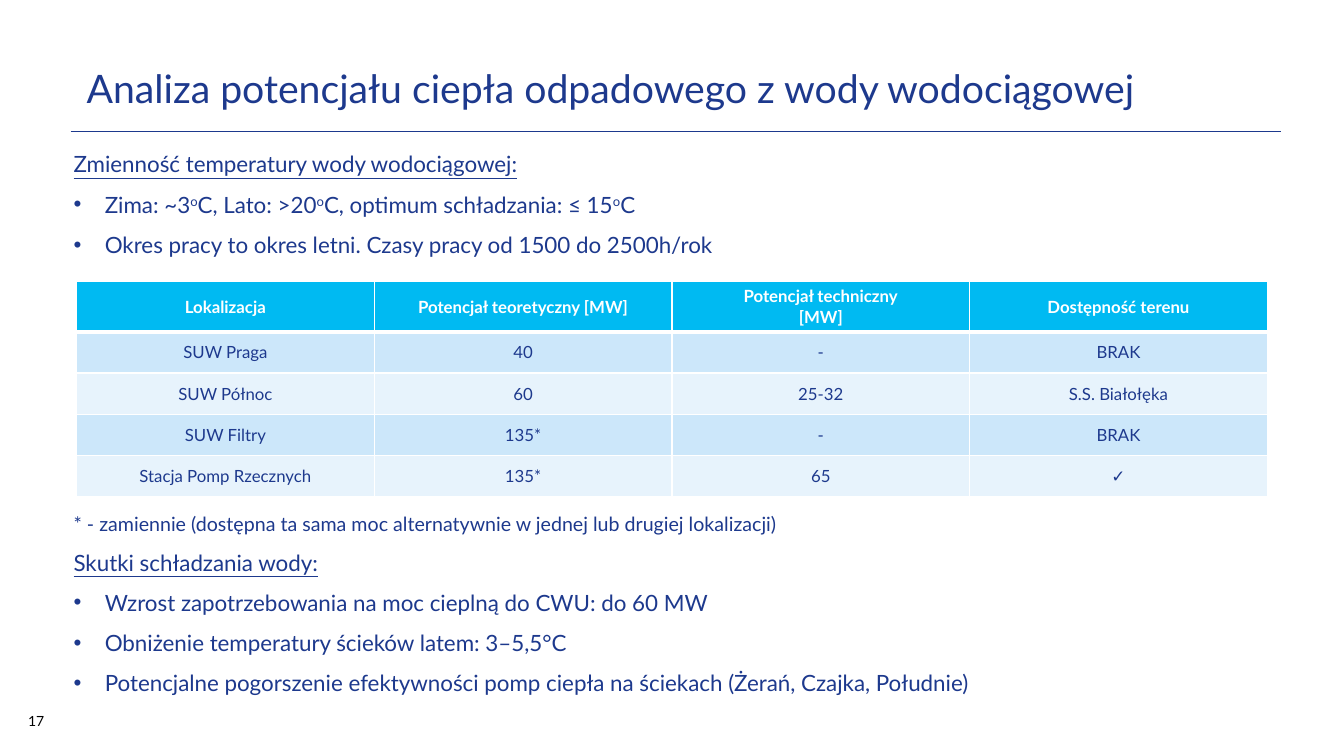
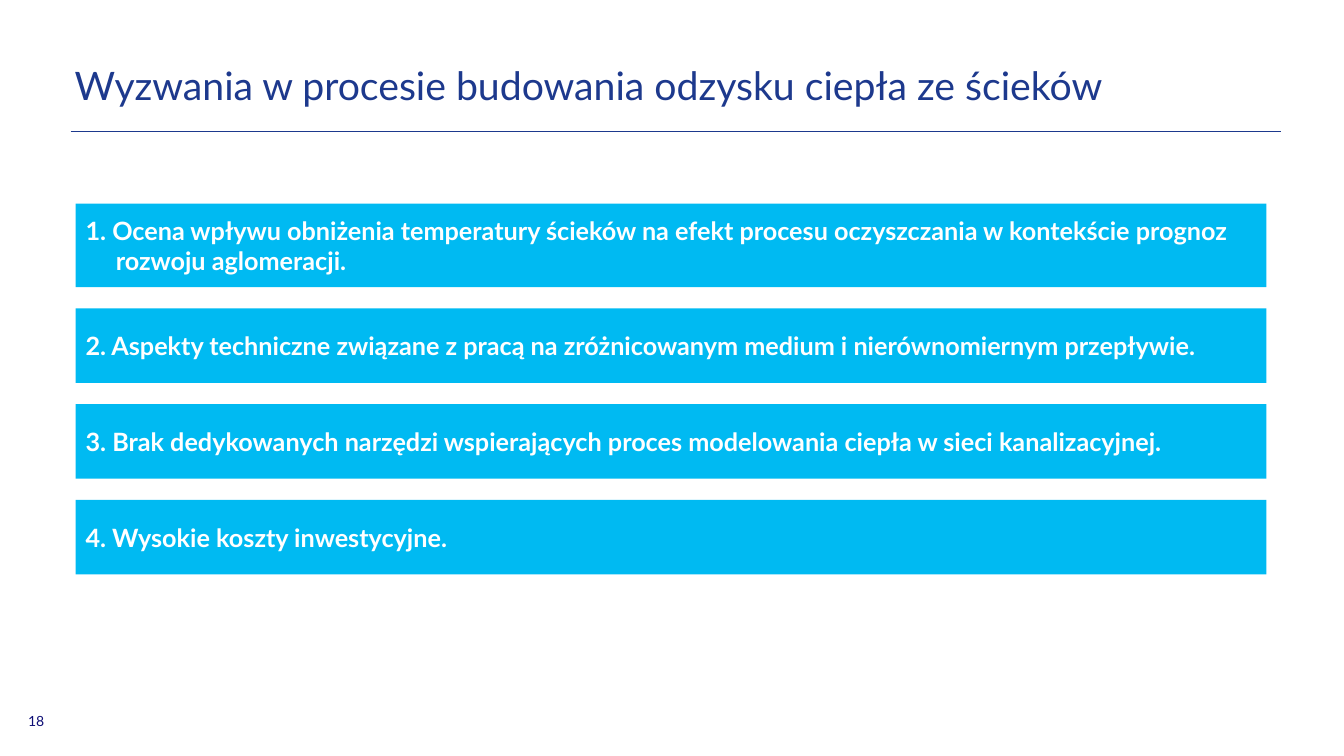
from lxml import etree
from pptx import Presentation
from pptx.dml.color import RGBColor
from pptx.enum.shapes import MSO_CONNECTOR, MSO_SHAPE
from pptx.enum.text import MSO_ANCHOR as Anchor, MSO_AUTO_SIZE as AutoSize, PP_ALIGN as Align
from pptx.oxml.ns import qn
from pptx.util import Inches, Pt

COLORS = {
    "navy": "1D398D",
    "cyan": "00BAF2",
    "row_dark": "CCE7FA",
    "row_light": "E7F3FC",
    "white": "FFFFFF",
    "black": "000000",
    "number_blue": "0F0F76",
}
FONT = "Lato"
TITLE_AND_TWO_BODIES, TITLE_ONLY = 3, 5

TOP_LIST = [
    ("heading", "Zmienność temperatury wody wodociągowej:"),
    ("bullet", "Zima: ~3^o^C, Lato: >20^o^C, optimum schładzania: ≤ 15^o^C"),
    ("bullet", "Okres pracy to okres letni. Czasy pracy od 1500 do 2500h/rok"),
]
BOTTOM_LIST = [
    ("note", "* - zamiennie (dostępna ta sama moc alternatywnie w jednej lub drugiej lokalizacji)"),
    ("heading", "Skutki schładzania wody:"),
    ("bullet", "Wzrost zapotrzebowania na moc cieplną do CWU: do 60 MW"),
    ("bullet", "Obniżenie temperatury ścieków latem: 3–5,5°C"),
    ("bullet", "Potencjalne pogorszenie efektywności pomp ciepła na ściekach (Żerań, Czajka, Południe)"),
]
POTENTIAL_ROWS = [
    ("Lokalizacja", "Potencjał teoretyczny [MW]", "Potencjał techniczny\n[MW]", "Dostępność terenu"),
    ("SUW Praga", "40", "-", "BRAK"),
    ("SUW Północ", "60", "25-32", "S.S. Białołęka"),
    ("SUW Filtry", "135*", "-", "BRAK"),
    ("Stacja Pomp Rzecznych", "135*", "65", "✓"),
]
# Text and box height
CHALLENGES = [
    ("1. Ocena wpływu obniżenia temperatury ścieków na efekt procesu oczyszczania "
     "w kontekście prognoz rozwoju aglomeracji.", 0.83),
    ("2. Aspekty techniczne związane z pracą na zróżnicowanym medium i nierównomiernym przepływie.", 0.74),
    ("3. Brak dedykowanych narzędzi wspierających proces modelowania ciepła w sieci kanalizacyjnej.", 0.74),
    ("4. Wysokie koszty inwestycyjne.", 0.74),
]


def rgb(name):
    return RGBColor.from_string(COLORS[name])


def style(para, size, color="navy", bold=False, underline=False):
    font = para.font
    font.name, font.size, font.bold, font.underline = FONT, Pt(size), bold, underline
    font.color.rgb = rgb(color)


def set_indent(para, hang):
    props = para._p.get_or_add_pPr()
    props.set("marL", str(Inches(hang)))
    props.set("indent", str(-Inches(hang)))
    return props


def place(shape, left, top, width, height):
    shape.left, shape.top = Inches(left), Inches(top)
    shape.width, shape.height = Inches(width), Inches(height)


# Shared frame: title, rule and page number
def add_page(deck, layout, title, title_at, anchor, number, number_color, left_inset=0.1):
    page = deck.slides.add_slide(deck.slide_layouts[layout])
    place(page.shapes.title, *title_at)
    frame = page.shapes.title.text_frame
    frame.text, frame.vertical_anchor = title, anchor
    frame.auto_size, frame.margin_left = AutoSize.NONE, Inches(left_inset)
    para = frame.paragraphs[0]
    para.alignment, para.line_spacing = Align.LEFT, 0.9
    style(para, 28)

    rule = page.shapes.add_connector(
        MSO_CONNECTOR.STRAIGHT, Inches(0.7), Inches(1.3), Inches(12.71), Inches(1.3))
    rule.line.color.rgb, rule.line.width = rgb("navy"), Pt(0.5)
    etree.SubElement(rule._element.spPr, qn("a:effectLst"))

    box = page.shapes.add_textbox(Inches(0.18), Inches(7.02), Inches(0.46), Inches(0.32))
    box.text_frame.word_wrap = True
    box.text_frame.text = number
    style(box.text_frame.paragraphs[0], 10, number_color)
    return page


def add_marked_text(para, text):
    """Text between carets is raised."""
    for index, part in enumerate(text.split("^")):
        span = para.add_run()
        span.text = part
        if index % 2:
            span._r.get_or_add_rPr().set("baseline", "30000")


def fill_body(body, top, height, items):
    place(body, 0.63, top, 11.81, height)
    frame = body.text_frame
    frame.auto_size = AutoSize.NONE
    for index, (kind, text) in enumerate(items):
        para = frame.add_paragraph() if index else frame.paragraphs[0]
        add_marked_text(para, text)
        para.alignment, para.line_spacing = Align.JUSTIFY, 1.5
        para.space_before = Pt(0)
        if kind == "bullet":
            props = set_indent(para, 0.31)
            etree.SubElement(props, qn("a:buFont")).set("typeface", "Arial")
            etree.SubElement(props, qn("a:buChar")).set("char", "•")
        else:
            etree.SubElement(set_indent(para, 0), qn("a:buNone"))
        style(para, 14 if kind == "note" else 16, underline=kind == "heading")


def set_borders(cell, is_header):
    props = cell._tc.get_or_add_tcPr()
    for side in "LRTB":
        width = 3 if is_header and side == "B" else 1
        line = etree.SubElement(props, qn(f"a:ln{side}"), w=str(Pt(width)))
        fill = etree.SubElement(line, qn("a:solidFill"))
        etree.SubElement(fill, qn("a:srgbClr")).set("val", COLORS["white"])


def add_potential_table(page, rows):
    table = page.shapes.add_table(
        len(rows), len(rows[0]), Inches(0.76), Inches(2.79), Inches(11.81), Inches(2.12)).table
    for row_index, values in enumerate(rows):
        is_header = row_index == 0
        table.rows[row_index].height = Inches(0.48 if is_header else 0.41)
        fill = "cyan" if is_header else ("row_light", "row_dark")[row_index % 2]
        for column, value in enumerate(values):
            cell = table.cell(row_index, column)
            cell.text, cell.vertical_anchor = value, Anchor.MIDDLE
            set_borders(cell, is_header)
            cell.fill.solid()
            cell.fill.fore_color.rgb = rgb(fill)
            for para in cell.text_frame.paragraphs:
                para.alignment = Align.CENTER
                style(para, 12, "white" if is_header else "navy", bold=is_header)


def add_challenge(page, top, height, text):
    box = page.shapes.add_shape(
        MSO_SHAPE.RECTANGLE, Inches(0.75), Inches(top), Inches(11.81), Inches(height))
    box.shadow.inherit = False
    box.fill.solid()
    box.fill.fore_color.rgb = rgb("cyan")
    box.line.fill.background()
    frame = box.text_frame
    frame.text, frame.word_wrap, frame.vertical_anchor = text, True, Anchor.MIDDLE
    para = frame.paragraphs[0]
    para.alignment = Align.LEFT
    set_indent(para, 0.3)
    style(para, 18, "white", bold=True)


def main():
    deck = Presentation()
    deck.slide_width, deck.slide_height = Inches(13.33), Inches(7.5)

    # Tap water heat potential
    page = add_page(deck, TITLE_AND_TWO_BODIES, "Analiza potencjału ciepła odpadowego z wody wodociągowej",
                    (0.76, 0.64, 11.81, 0.53), Anchor.TOP, "17", "black")
    fill_body(page.placeholders[1], 1.31, 1.3, TOP_LIST)
    fill_body(page.placeholders[2], 4.91, 2.05, BOTTOM_LIST)
    add_potential_table(page, POTENTIAL_ROWS)

    # Heat recovery challenges
    page = add_page(deck, TITLE_ONLY, "Wyzwania w procesie budowania odzysku ciepła ze ścieków",
                    (0.74, 0.46, 12.11, 0.83), Anchor.MIDDLE, "18", "number_blue", left_inset=0)
    top, gap = 2.02, 0.21
    for text, height in CHALLENGES:
        add_challenge(page, top, height, text)
        top += height + gap

    deck.save("out.pptx")


if __name__ == "__main__":
    main()
